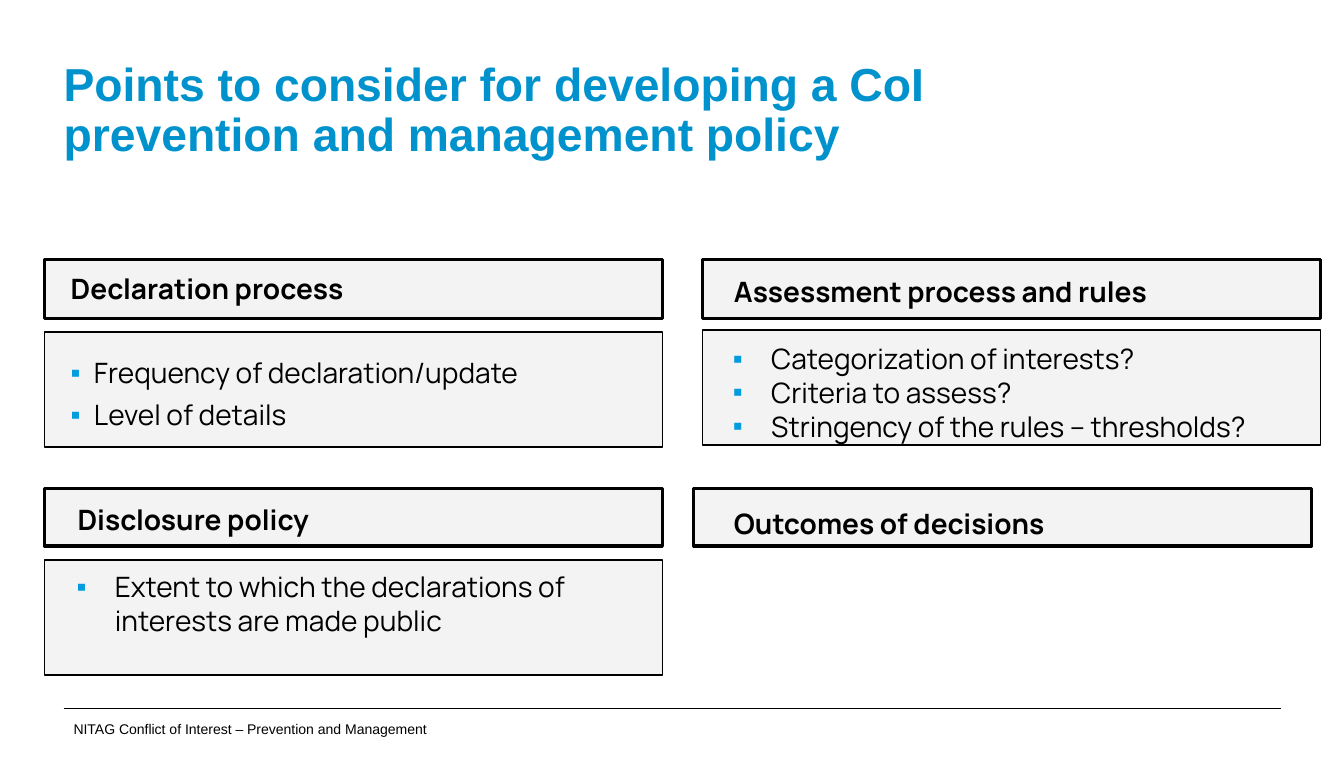
"""Build the slide on points to consider for a CoI policy."""
import pptx
import pptx.util
import pptx.dml.color
import pptx.enum.shapes
import pptx.enum.text
import lxml.etree
from pptx.util import Inches, Pt

NS = "http://schemas.openxmlformats.org/drawingml/2006/main"
BLACK = "000000"


def color(code):
    return pptx.dml.color.RGBColor.from_string(code)


def write(frame, text, look, tint=BLACK, first=False, **form):
    para = frame.paragraphs[0] if first else frame.add_paragraph()
    para.alignment = pptx.enum.text.PP_ALIGN.LEFT
    para.space_before = Pt(0)
    for key, value in form.items():
        setattr(para, key, value)
    run = para.add_run()
    run.text = text
    for key, value in look.items():
        setattr(run.font, key, value)
    run.font.color.rgb = color(tint)
    return para


deck = pptx.Presentation()
deck.slide_width, deck.slide_height = Inches(13.31), Inches(7.52)
slide = deck.slides.add_slide(deck.slide_layouts[1])
shapes = slide.shapes
title, body = slide.placeholders

panels = [(0.44, 3.29, 1.14, 1), (6.96, 3.27, 1.14, 1), (0.44, 5.55, 1.14, 1),
          (0.44, 4.84, 0.57, 2.25), (6.87, 4.84, 0.57, 2.25),
          (0.44, 2.57, 0.59, 2.25), (6.96, 2.57, 0.59, 2.25)]
for left, top, height, weight in panels:
    panel = shapes.add_shape(pptx.enum.shapes.MSO_SHAPE.RECTANGLE,
                             Inches(left), Inches(top), Inches(6.12), Inches(height))
    panel.shadow.inherit = False
    panel.fill.solid()
    panel.fill.fore_color.rgb = color("F3F3F3")
    panel.line.color.rgb = color(BLACK)
    panel.line.width = Pt(weight)

rule = shapes.add_connector(pptx.enum.shapes.MSO_CONNECTOR.STRAIGHT,
                            Inches(0.63), Inches(7.02), Inches(12.69), Inches(7.02))
rule.line.color.rgb = color(BLACK)
rule.line.width = Pt(0.75)
lxml.etree.SubElement(rule.element.spPr, f"{{{NS}}}effectLst")

shapes.element.append(body.element)
shapes.element.append(title.element)
boxes = {"title": title, "process": body}
for name in ("rules", "public", "outcome", "footer"):
    boxes[name] = shapes.add_textbox(0, 0, 0, 0)

places = {
    "title": (0.63, 0.6, 9.15, 1.01),
    "process": (0.44, 2.69, 6.13, 2.12),
    "rules": (6.93, 2.67, 7.27, 1.78),
    "public": (0.43, 4.93, 5.33, 1.45),
    "outcome": (6.93, 4.8, 6.66, 0.56),
    "footer": (0.63, 7.09, 8.27, 0.12),
}
insets = {"title": (0, 0.01), "process": (0.02, 0)}
for name, box in boxes.items():
    for key, value in zip(("left", "top", "width", "height"), places[name]):
        setattr(box, key, Inches(value))
    side, head = insets.get(name, (0.1, 0.05))
    format = {
        "word_wrap": True,
        "auto_size": pptx.enum.text.MSO_AUTO_SIZE.NONE,
        "vertical_anchor": pptx.enum.text.MSO_ANCHOR.TOP,
        "margin_left": Inches(side),
        "margin_right": Inches(side),
        "margin_top": Inches(head),
        "margin_bottom": Inches(0),
    }
    for key, value in format.items():
        setattr(box.text_frame, key, value)

write(title.text_frame, "Points to consider for developing a CoI prevention and management policy",
      {"name": "Arial", "size": Pt(33), "bold": True}, "0092CC", True, line_spacing=0.9)
write(boxes["footer"].text_frame, "NITAG Conflict of Interest – Prevention and Management",
      {"name": "Arial", "size": Pt(10)}, first=True)

topics = [
    ("process", "Declaration process", 1, 0.47, 0.23, 36, 6,
     ["Frequency of declaration/update", "Level of details"]),
    ("rules", "Assessment process and rules", 1, 0.61, 0.38, 24, 0,
     ["Categorization of interests?", "Criteria to assess?",
      "Stringency of the rules – thresholds?"]),
    ("public", "Disclosure policy", 1, 0.61, 0.38, 24, 0,
     ["Extent to which the declarations of interests are made public"]),
    ("outcome", "Outcomes of decisions", 1.5, 0, 0, 0, 0, []),
]
for name, head, pitch, margin, hang, lead, gap, points in topics:
    frame = boxes[name].text_frame
    look = {"name": "Manrope", "size": Pt(20), "bold": True}
    para = write(frame, head, look, first=True, line_spacing=pitch)
    props = para._p.get_or_add_pPr()
    props.set("marL", str(Inches(0.24)))
    props.set("indent", "0")
    lxml.etree.SubElement(props, f"{{{NS}}}buNone")
    for index, point in enumerate(points):
        para = write(frame, point, look | {"bold": False},
                     space_before=Pt(gap if index else lead))
        props = para._p.get_or_add_pPr()
        props.set("marL", str(Inches(margin)))
        props.set("indent", str(-Inches(hang)))
        tint = lxml.etree.SubElement(props, f"{{{NS}}}buClr")
        lxml.etree.SubElement(tint, f"{{{NS}}}srgbClr", val="009CDE")
        lxml.etree.SubElement(props, f"{{{NS}}}buFont", typeface="Arial")
        lxml.etree.SubElement(props, f"{{{NS}}}buChar", char="▪")

deck.save("out.pptx")
